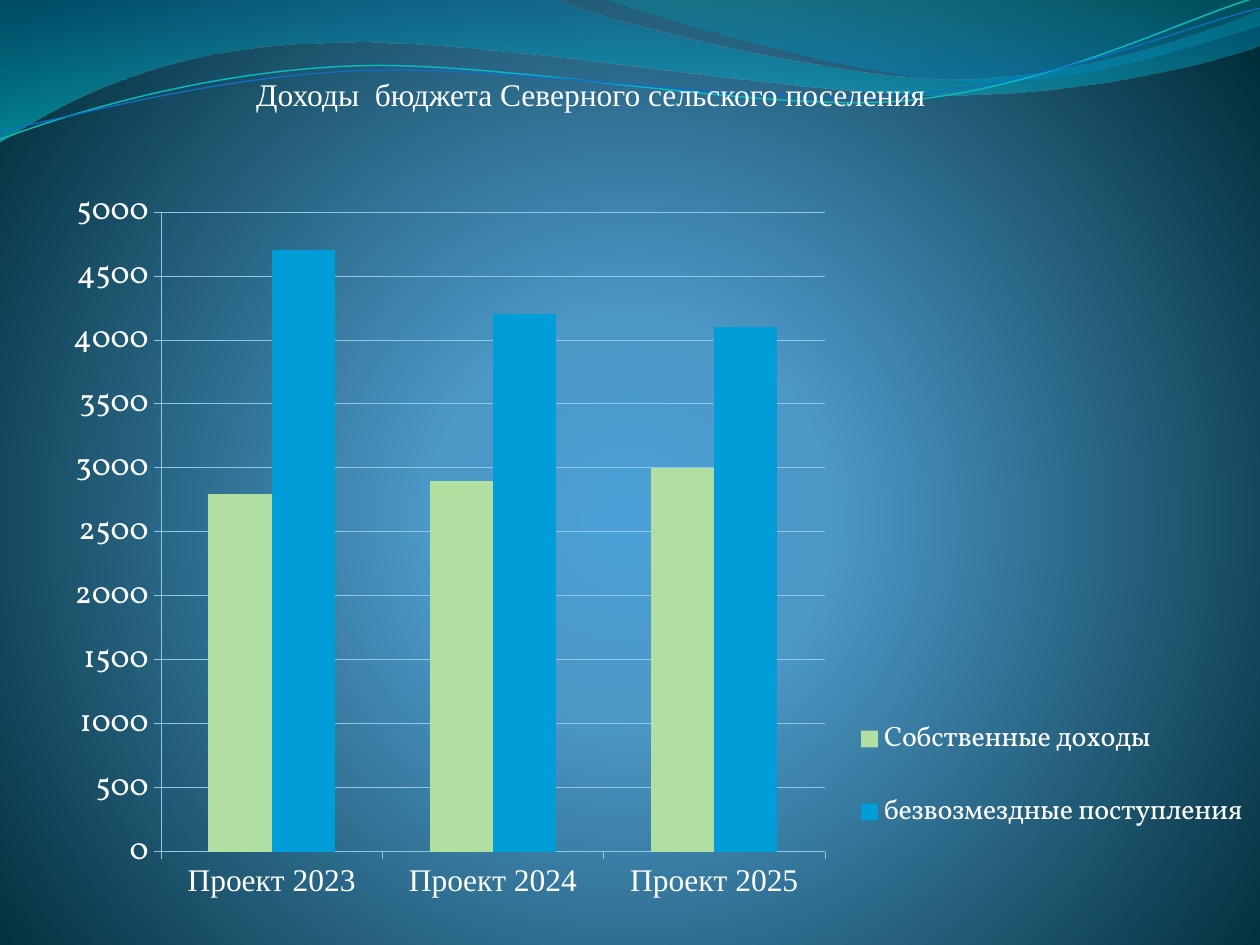
"""Build the budget income slide with a clustered column chart."""
from lxml import etree
from pptx import Presentation
from pptx.chart.data import CategoryChartData
from pptx.dml.color import RGBColor
from pptx.enum import chart as charts, text
from pptx.oxml import parse_xml
from pptx.oxml.ns import qn
from pptx.util import Pt

SCALE = 914400 / 126
WIDTH, HEIGHT = 1260, 945
A = "http://schemas.openxmlformats.org/drawingml/2006/main"
RADIAL = '<a:path path="circle"><a:fillToRect l="10000" t="110000" r="10000" b="100000"/></a:path>'
DOWNWARD = '<a:lin ang="5400000" scaled="0"/>'

WIDE_WAVE = [[(0, 0)], [(554, -1)],
             [(600, 21), (837, 79), (955, 79)], [(1075, 79), (1207, 33), (1260, 11)],
             [(1261, 45)],
             [(1239, 55), (1096, 96), (940, 95)], [(784, 95), (481, 35), (324, 43)],
             [(163, 45), (58, 105), (-1, 142)]]
RIGHT_WAVE = [[(604, -1)],
              [(641, 14), (859, 78), (969, 82)], [(1079, 87), (1211, 40), (1260, 26)],
              [(1260, 0)]]
TEAL_LINE = [[(-3, 110)], [(58, 90), (199, 52), (350, 53)],
             [(499, 53), (745, 117), (896, 114)], [(1048, 109), (1184, 45), (1260, 27)]]
BLUE_LINE = [[(-2, 101)], [(57, 94), (207, 57), (357, 58)],
             [(509, 58), (749, 112), (902, 108)], [(1052, 104), (1188, 52), (1262, 38)]]


def px(value):
    return round(value * SCALE)


def rgb(value):
    return RGBColor.from_string(value)


def gradient(stops, direction):
    marks = "".join(
        f'<a:gs pos="{position * 1000}"><a:srgbClr val="{color}">'
        f'<a:alpha val="{opacity * 1000}"/></a:srgbClr></a:gs>'
        for position, color, opacity in stops)
    return parse_xml(f'<a:gradFill xmlns:a="{A}" rotWithShape="1">'
                     f'<a:gsLst>{marks}</a:gsLst>{direction}</a:gradFill>')


def bend(shape, segments):
    lines = iter(shape.element.findall(".//" + qn("a:lnTo")))
    for segment in segments[1:]:
        group = [next(lines) for _ in segment]
        if len(group) == 3:
            curve = etree.Element(qn("a:cubicBezTo"))
            group[0].addprevious(curve)
            for line in group:
                curve.append(line[0])
                line.getparent().remove(line)


class Deck:
    """Hold the slide style and draw each kind of element."""
    font = "Times New Roman"
    chart_font = "Vollkorn"
    ink = "FFFFFF"
    grid = "8CC8E8"

    def __init__(self):
        self.presentation = Presentation()
        self.presentation.slide_width, self.presentation.slide_height = px(WIDTH), px(HEIGHT)
        self.slide = self.presentation.slides.add_slide(self.presentation.slide_layouts[5])

    def style(self, font, size, name):
        font.size, font.name = Pt(size), name
        font.color.rgb = rgb(self.ink)

    def background(self, stops):
        self.slide.background.fill.solid()
        properties = self.slide.element.find(".//" + qn("p:bgPr"))
        properties.replace(properties.find(qn("a:solidFill")), gradient(stops, RADIAL))

    def outline(self, segments, closed):
        points = [(px(x), px(y)) for segment in segments for x, y in segment]
        builder = self.slide.shapes.build_freeform(*points[0])
        builder.add_line_segments(points[1:], close=closed)
        shape = builder.convert_to_shape()
        bend(shape, segments)
        shape.shadow.inherit = False
        shape.fill.background()
        return shape

    def wave(self, segments, stops):
        shape = self.outline(segments, True)
        properties = shape.element.spPr
        properties.replace(properties.find(qn("a:noFill")), gradient(stops, DOWNWARD))
        shape.line.fill.background()

    def curve(self, segments, color, width):
        shape = self.outline(segments, False)
        shape.rotation = 357.3
        shape.line.color.rgb = rgb(color)
        shape.line.width = Pt(width)

    def title(self, wording, left, top, width, height):
        shape = self.slide.shapes.title
        shape.left, shape.top, shape.width, shape.height = map(px, (left, top, width, height))
        frame = shape.text_frame
        frame.text = wording
        frame.word_wrap = True
        frame.auto_size = text.MSO_AUTO_SIZE.NONE
        frame.vertical_anchor = text.MSO_ANCHOR.TOP
        paragraph = frame.paragraphs[0]
        paragraph.alignment = text.PP_ALIGN.CENTER
        self.style(paragraph.runs[0].font, 18, self.font)
        self.slide.shapes.element.append(shape.element)

    def columns(self, categories, series, left, top, width, height):
        data = CategoryChartData()
        data.categories = categories
        for name, values, _ in series:
            data.add_series(name, values)
        chart = self.slide.shapes.add_chart(charts.XL_CHART_TYPE.COLUMN_CLUSTERED,
                                            *map(px, (left, top, width, height)), data).chart
        chart.has_title = False
        self.style(chart.font, 18, self.chart_font)
        plot = chart.plots[0]
        plot.vary_by_categories = False
        plot.gap_width, plot.overlap = 150, 0
        for column, (_, _, color) in zip(plot.series, series):
            column.invert_if_negative = False
            column.format.fill.solid()
            column.format.fill.fore_color.rgb = rgb(color)
        value_axis, category_axis = chart.value_axis, chart.category_axis
        value_axis.minimum_scale, value_axis.maximum_scale = 0, 5000
        value_axis.major_unit = 500
        value_axis.has_major_gridlines = True
        for axis in (value_axis, category_axis):
            axis.major_tick_mark = charts.XL_TICK_MARK.OUTSIDE
        for line in (value_axis.format.line, category_axis.format.line,
                     value_axis.major_gridlines.format.line):
            line.color.rgb = rgb(self.grid)
            line.width = Pt(0.5)
        self.style(category_axis.tick_labels.font, 18, self.font)
        chart.has_legend = True
        legend = chart.legend
        legend.position = charts.XL_LEGEND_POSITION.RIGHT
        legend.include_in_layout = False
        self.style(legend.font, 16, self.chart_font)
        return chart

    def place(self, chart, part, index, box, size, target=None):
        parent = chart.element.find(".//" + qn(part))
        for old in parent.findall(qn("c:layout")):
            parent.remove(old)
        layout = etree.Element(qn("c:layout"))
        manual = etree.SubElement(layout, qn("c:manualLayout"))
        settings = {"layoutTarget": target} if target else {}
        settings.update(xMode="edge", yMode="edge")
        settings.update((name, length / size[i % 2])
                        for i, (name, length) in enumerate(zip("xywh", box)))
        for name, value in settings.items():
            etree.SubElement(manual, qn(f"c:{name}")).set("val", str(value))
        parent.insert(index, layout)


def main():
    deck = Deck()
    deck.background([(0, "4AA0D6", 100), (25, "4C98C7", 100), (100, "002C38", 100)])
    deck.wave(WIDE_WAVE, [(0, "0074A1", 45), (100, "00C6CF", 55)])
    deck.wave(RIGHT_WAVE, [(0, "00A1A9", 30), (80, "008BBF", 45)])
    deck.curve(TEAL_LINE, "0AB8BF", 0.85)
    deck.curve(BLUE_LINE, "0F6FC6", 0.75)
    size = (1211, 738)
    chart = deck.columns(["Проект 2023", "Проект 2024", "Проект 2025"],
                         [("Собственные доходы", (2800, 2900, 3000), "B0DFA1"),
                          ("безвозмездные поступления", (4700, 4200, 4100), "009DD9")],
                         49, 175, *size)
    deck.place(chart, "c:plotArea", 0, (112, 37, 664, 640), size, "inner")
    deck.place(chart, "c:legend", 1, (803, 510, 400, 181), size)
    deck.title("Доходы  бюджета Северного сельского поселения", 40, 69, 1102, 50)
    deck.presentation.save("out.pptx")


if __name__ == "__main__":
    main()
